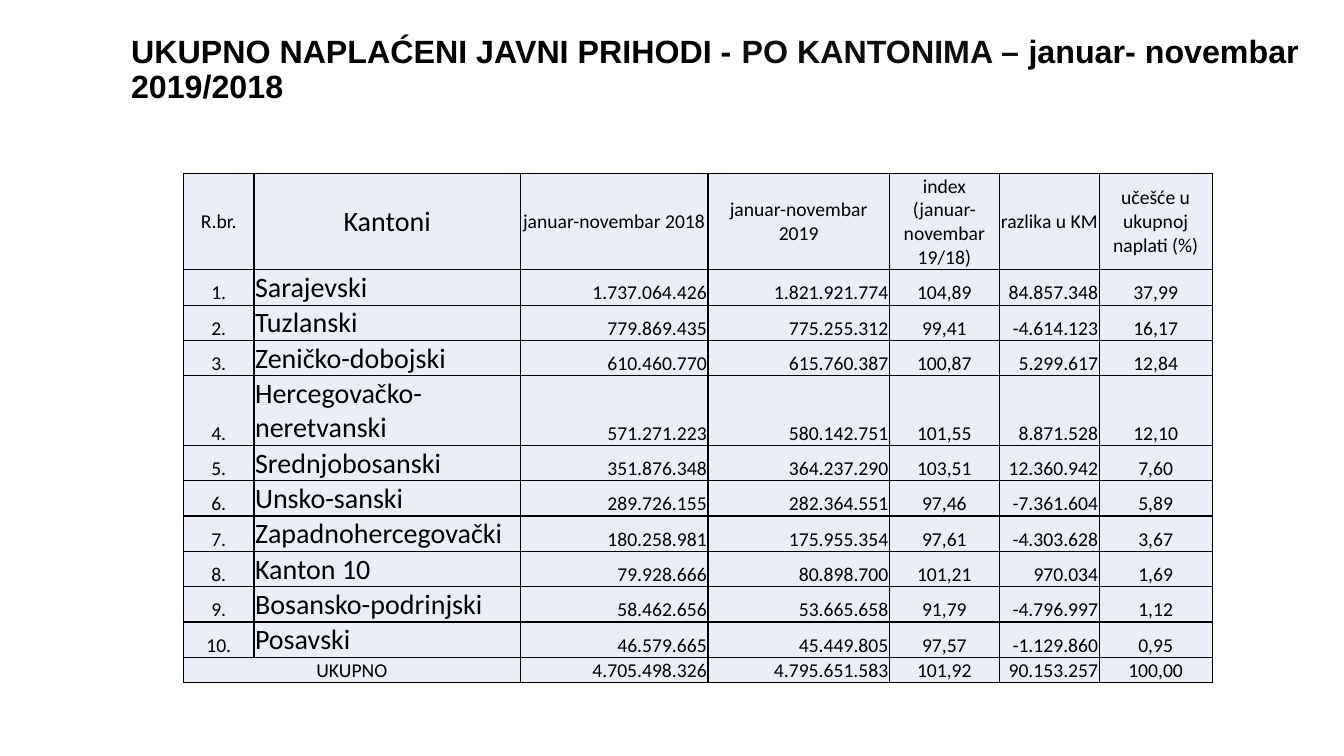
from dataclasses import dataclass

from lxml import etree
from pptx import Presentation
from pptx import util as u
from pptx.dml.color import RGBColor
from pptx.enum import text
from pptx.oxml import ns


@dataclass(frozen=True)
class Theme:
    ink: str = "000000"
    soft_ink: str = "0D0D0D"
    cell: str = "EAEFF7"
    title_font: str = "Arial"
    body_font: str = "Calibri"
    title_size: int = 23
    name_size: int = 20
    body_size: int = 14
    border: int = 1


THEME = Theme()
LEFT, CENTER, RIGHT = text.PP_ALIGN.LEFT, text.PP_ALIGN.CENTER, text.PP_ALIGN.RIGHT
MIDDLE, BOTTOM = text.MSO_ANCHOR.MIDDLE, text.MSO_ANCHOR.BOTTOM

TITLE_BOX = (9, 2.8, 88.6, 13.07)
TABLE_BOX = (13.65, 22.93, 76.55, 62.27)
TITLE = [
    ("UKUPNO NAPLAĆENI JAVNI PRIHODI - ", THEME.ink),
    ("PO KANTONIMA – ", THEME.soft_ink),
    ("januar- novembar 2019/2018", THEME.ink),
]
COLUMN_WEIGHTS = [70, 264, 186, 180, 109, 99, 112]
COLUMN_ALIGN = [CENTER, LEFT, RIGHT, RIGHT, CENTER, RIGHT, CENTER]
HEADER_WEIGHT, CANTON_WEIGHT, TOTAL_WEIGHT = 92, 35, 25
NAME_COLUMN = 1

HEADER = ["R.br.", "Kantoni", "januar-novembar 2018", "januar-novembar 2019",
          "index (januar-novembar 19/18)", "razlika u KM", "učešće u ukupnoj naplati (%)"]
CANTONS = [
    ("Sarajevski", "1.737.064.426", "1.821.921.774", "104,89", "84.857.348", "37,99"),
    ("Tuzlanski", "779.869.435", "775.255.312", "99,41", "-4.614.123", "16,17"),
    ("Zeničko-dobojski", "610.460.770", "615.760.387", "100,87", "5.299.617", "12,84"),
    ("Hercegovačko-neretvanski", "571.271.223", "580.142.751", "101,55", "8.871.528", "12,10"),
    ("Srednjobosanski", "351.876.348", "364.237.290", "103,51", "12.360.942", "7,60"),
    ("Unsko-sanski", "289.726.155", "282.364.551", "97,46", "-7.361.604", "5,89"),
    ("Zapadnohercegovački", "180.258.981", "175.955.354", "97,61", "-4.303.628", "3,67"),
    ("Kanton 10", "79.928.666", "80.898.700", "101,21", "970.034", "1,69"),
    ("Bosansko-podrinjski", "58.462.656", "53.665.658", "91,79", "-4.796.997", "1,12"),
    ("Posavski", "46.579.665", "45.449.805", "97,57", "-1.129.860", "0,95"),
]
TOTAL = ["UKUPNO", "", "4.705.498.326", "4.795.651.583", "101,92", "90.153.257", "100,00"]


def place(prs, box):
    return [int(size * share / 100)
            for size, share in zip((prs.slide_width, prs.slide_height) * 2, box)]


def add_text(p, content, *, size=THEME.body_size, font=THEME.body_font,
             color=THEME.ink, bold=False, align=LEFT):
    p.alignment = align
    r = p.add_run()
    r.text = content
    r.font.size = u.Pt(size)
    r.font.name = font
    r.font.bold = bold
    r.font.color.rgb = RGBColor.from_string(color)


def set_borders(cell):
    props = cell._tc.get_or_add_tcPr()
    for side in ("a:lnL", "a:lnR", "a:lnT", "a:lnB"):
        line = etree.SubElement(props, ns.qn(side), w=str(u.Pt(THEME.border)))
        fill = etree.SubElement(line, ns.qn("a:solidFill"))
        etree.SubElement(fill, ns.qn("a:srgbClr"), val=THEME.ink)


def fill_cell(cell, content, *, size, align, anchor):
    set_borders(cell)
    cell.fill.solid()
    cell.fill.fore_color.rgb = RGBColor.from_string(THEME.cell)
    cell.margin_left = cell.margin_right = cell.margin_top = u.Inches(0.01)
    cell.margin_bottom = 0
    cell.vertical_anchor = anchor
    if content:
        add_text(cell.text_frame.paragraphs[0], content, size=size, align=align)


def add_title(s, box):
    sp = s.shapes.title
    sp.left, sp.top, sp.width, sp.height = box
    tf = sp.text_frame
    tf.word_wrap = True
    tf.auto_size = text.MSO_AUTO_SIZE.NONE
    tf.vertical_anchor = MIDDLE
    p = tf.paragraphs[0]
    p.line_spacing = 0.9
    for content, color in TITLE:
        add_text(p, content, size=THEME.title_size, font=THEME.title_font,
                 color=color, bold=True)


def add_revenue_table(s, box):
    rows = [HEADER] + [[f"{n}.", *canton] for n, canton in enumerate(CANTONS, 1)] + [TOTAL]
    row_weights = [HEADER_WEIGHT] + [CANTON_WEIGHT] * len(CANTONS) + [TOTAL_WEIGHT]
    table = s.shapes.add_table(len(rows), len(HEADER), *box).table
    table.first_row = table.horz_banding = False
    for column, weight in zip(table.columns, COLUMN_WEIGHTS):
        column.width = int(box[2] * weight / sum(COLUMN_WEIGHTS))
    for row, weight in zip(table.rows, row_weights):
        row.height = int(box[3] * weight / sum(row_weights))
    last = len(rows) - 1
    for i, row in enumerate(rows):
        for j, content in enumerate(row):
            named = j == NAME_COLUMN and i < last
            fill_cell(table.cell(i, j), content,
                      size=THEME.name_size if named else THEME.body_size,
                      align=COLUMN_ALIGN[j] if i else CENTER,
                      anchor=BOTTOM if i else MIDDLE)
    table.cell(last, 0).merge(table.cell(last, NAME_COLUMN))


def main():
    prs = Presentation()
    prs.slide_width, prs.slide_height = u.Inches(13.33), u.Inches(7.5)
    s = prs.slides.add_slide(prs.slide_layouts[5])
    add_title(s, place(prs, TITLE_BOX))
    add_revenue_table(s, place(prs, TABLE_BOX))
    prs.save("out.pptx")


if __name__ == "__main__":
    main()
